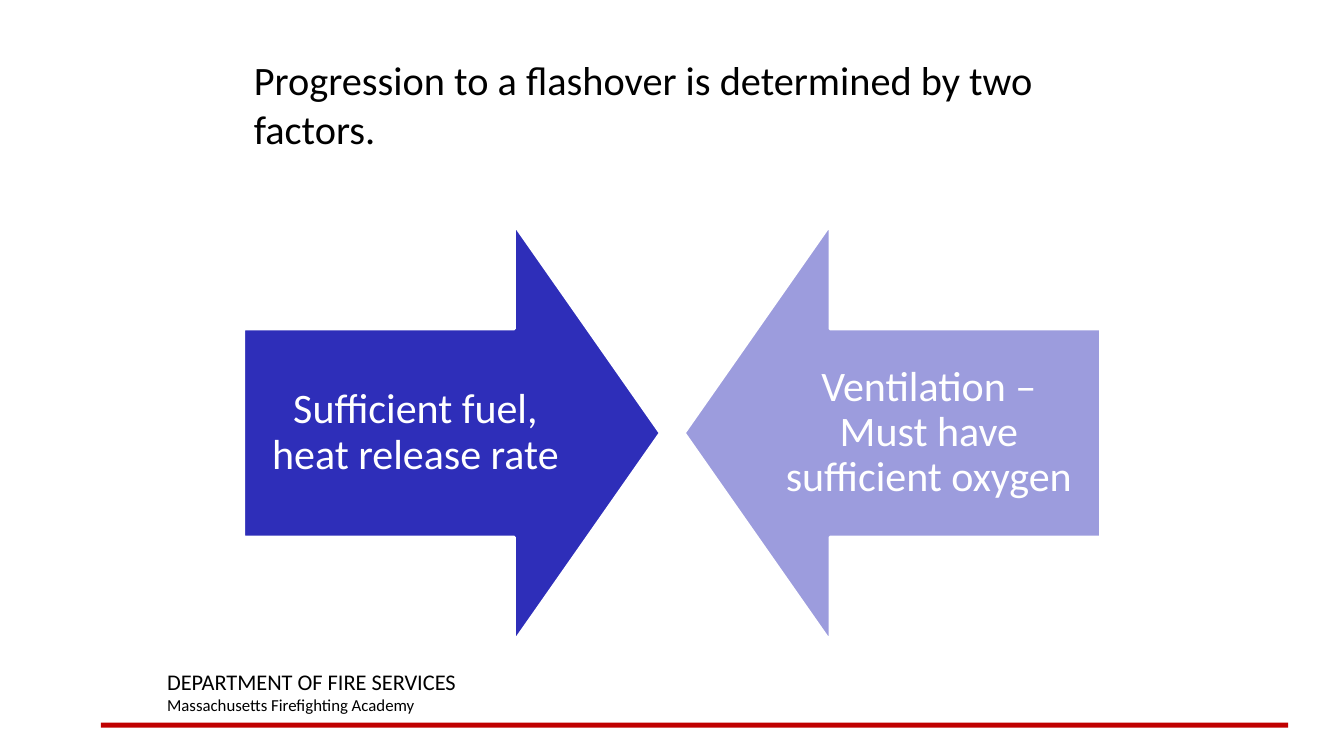
from pptx import Presentation
from pptx.dml.color import RGBColor
from pptx.enum.shapes import MSO_SHAPE
from pptx.enum.text import MSO_ANCHOR, MSO_AUTO_SIZE, PP_ALIGN
from pptx.util import Pt

BLACK = RGBColor(0x00, 0x00, 0x00)
WHITE = RGBColor(0xFF, 0xFF, 0xFF)
RED = RGBColor(0xC0, 0x00, 0x00)
BLUE = RGBColor(0x2E, 0x2E, 0xB9)
LILAC = RGBColor(0x9C, 0x9C, 0xDD)


def apply(item, form):
    for key, value in form.items():
        setattr(item, key, value)


def place(item, box):
    apply(item, dict(zip(("left", "top", "width", "height"), map(Pt, box))))


def write(para, text, size, color, align=PP_ALIGN.LEFT):
    para.text = text
    para.alignment = align
    apply(para.font, {"name": "Calibri", "size": Pt(size), "bold": False})
    para.font.color.rgb = color


def add_form(slide, kind, box, fill):
    form = slide.shapes.add_shape(kind, *map(Pt, box))
    form.shadow.inherit = False
    form.fill.solid()
    form.fill.fore_color.rgb = fill
    form.line.fill.background()
    return form


def add_title(slide, box, text):
    title = slide.shapes.title
    place(title, box)
    apply(title.text_frame, {
        "word_wrap": True,
        "auto_size": MSO_AUTO_SIZE.NONE,
        "vertical_anchor": MSO_ANCHOR.TOP,
    })
    write(title.text_frame.paragraphs[0], text, 28.8, BLACK)


def add_arrow(slide, kind, box, fill, text):
    arrow = add_form(slide, kind, box, fill)
    arrow.adjustments[0] = 0.5
    arrow.adjustments[1] = 0.35
    arrow.line.color.rgb = WHITE
    arrow.line.width = Pt(2)
    frame = arrow.text_frame
    sides = ("left", "top", "right", "bottom")
    apply(frame, {f"margin_{side}": Pt(16.5) for side in sides})
    apply(frame, {"word_wrap": True, "vertical_anchor": MSO_ANCHOR.MIDDLE})
    para = frame.paragraphs[0]
    write(para, text, 30, WHITE, PP_ALIGN.CENTER)
    para.line_spacing = 0.9


def add_pair(slide, box, items):
    left, top, width, size = box
    step = (width - size) / (len(items) - 1)
    for i, item in enumerate(items):
        kind, fill, text = item
        add_arrow(slide, kind, (left + i * step, top, size, size), fill, text)


def add_foot(slide, box, lines):
    left, top, width, height = box
    add_form(slide, MSO_SHAPE.RECTANGLE,
             (left, top + height - 3.6, width, 3.6), RED)
    note = slide.shapes.add_textbox(
        *map(Pt, (left + 40.3, top, 408.2, 41)))
    frame = note.text_frame
    frame.word_wrap = True
    for i, (text, size) in enumerate(lines):
        para = frame.add_paragraph() if i else frame.paragraphs[0]
        write(para, text, size, BLACK)


def main():
    deck = Presentation()
    apply(deck, {"slide_width": Pt(960), "slide_height": Pt(540)})
    slide = deck.slides.add_slide(deck.slide_layouts[5])
    add_foot(slide, (72, 473.8, 848.2, 46), [
        ("DEPARTMENT OF FIRE SERVICES", 16),
        ("Massachusetts Firefighting Academy", 12),
    ])
    add_pair(slide, (174.2, 160.6, 612, 297.4), [
        (MSO_SHAPE.RIGHT_ARROW, BLUE, "Sufficient fuel, heat release rate"),
        (MSO_SHAPE.LEFT_ARROW, LILAC,
         "Ventilation – Must have sufficient oxygen"),
    ])
    add_title(slide, (174.2, 36, 635.8, 72),
              "Progression to a flashover is determined by two factors.")
    deck.save("out.pptx")


if __name__ == "__main__":
    main()
